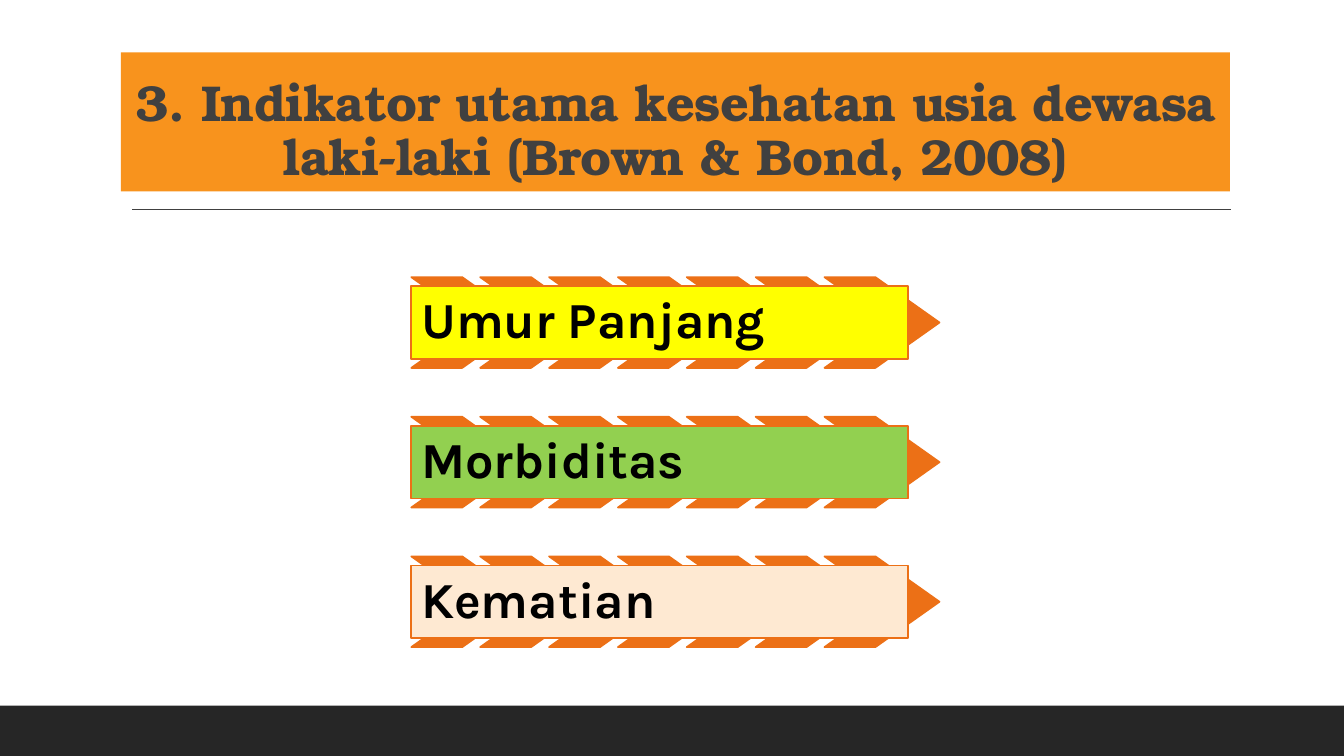
from pptx import Presentation
from pptx.dml.color import RGBColor
from pptx.enum.shapes import MSO_CONNECTOR, MSO_SHAPE as SHAPE
from pptx.enum.text import MSO_ANCHOR as ANCHOR, PP_ALIGN as ALIGN
from pptx.oxml.ns import qn
from pptx.util import Inches, Pt
from lxml import etree

TITLE = "3. Indikator utama kesehatan usia dewasa laki-laki (Brown & Bond, 2008)"
INDICATORS = [
    ("Umur Panjang", "FFFF00"),
    ("Morbiditas", "92D050"),
    ("Kematian", "FEE9D2"),
]
ORANGE, GREY = "EC7016", "404040"

LEFT, TOP, ROW_STEP = 4.08, 2.75, 1.385
CHEVRONS, CHEVRON_STEP = 7, 0.683
CHEVRON_W, CHEVRON_H = 1.14, 0.9
BAR_W, BAR_H = 4.93, 0.72


def color(value):
    return RGBColor.from_string(value)


def add_box(s, kind, x, y, w, h, fill, line=None):
    sp = s.shapes.add_shape(kind, Inches(x), Inches(y), Inches(w), Inches(h))
    sp.shadow.inherit = False
    sp.fill.solid()
    sp.fill.fore_color.rgb = color(fill)
    if line:
        sp.line.color.rgb = color(line)
        sp.line.width = Pt(1.25)
    else:
        sp.line.fill.background()
    return sp


def write(sp, text, *, font, ink, align=ALIGN.LEFT, anchor=ANCHOR.MIDDLE,
          margin_y=0.1, spacing=0):
    """Fill a shape with one bold paragraph; spacing is in points."""
    tf = sp.text_frame
    tf.word_wrap = True
    tf.vertical_anchor = anchor
    tf.margin_left = tf.margin_right = Inches(0.1)
    tf.margin_top = tf.margin_bottom = Inches(margin_y)
    p = tf.paragraphs[0]
    p.alignment = align
    p.line_spacing = 0.9
    r = p.add_run()
    r.text = text
    r.font.name = font
    r.font.size = Pt(36)
    r.font.bold = True
    r.font.color.rgb = color(ink)
    if spacing:
        r.font._element.set("spc", str(round(spacing * 100)))


def add_rule(s, x1, x2, y):
    rule = s.shapes.add_connector(MSO_CONNECTOR.STRAIGHT, Inches(x1), Inches(y),
                                  Inches(x2), Inches(y))
    rule.line.color.rgb = color(GREY)
    rule.line.width = Pt(1)
    etree.SubElement(rule._element.spPr, qn("a:effectLst"))


def add_indicator(s, y, text, fill):
    """Draw a row of chevrons with a labelled bar across it."""
    for i in range(CHEVRONS):
        chevron = add_box(s, SHAPE.CHEVRON, LEFT + i * CHEVRON_STEP, y,
                          CHEVRON_W, CHEVRON_H, ORANGE, ORANGE)
        chevron.adjustments[0] = 0.706
    bar = add_box(s, SHAPE.RECTANGLE, LEFT, y + (CHEVRON_H - BAR_H) / 2,
                  BAR_W, BAR_H, fill, ORANGE)
    write(bar, text, font="Karla", ink="000000")


def main():
    prs = Presentation()
    prs.slide_width, prs.slide_height = Inches(13.33), Inches(7.5)
    s = prs.slides.add_slide(prs.slide_layouts[6])

    add_box(s, SHAPE.RECTANGLE, 0, 7, 13.33, 0.5, "262626")
    add_rule(s, 1.31, 12.21, 2.08)
    title = add_box(s, SHAPE.RECTANGLE, 1.2, 0.52, 11, 1.38, "F8931D")
    write(title, TITLE, font="TeX Gyre Bonum", ink=GREY, align=ALIGN.CENTER,
          anchor=ANCHOR.BOTTOM, margin_y=0.05, spacing=-0.5)

    for row, (text, fill) in enumerate(INDICATORS):
        add_indicator(s, TOP + row * ROW_STEP, text, fill)

    prs.save("out.pptx")


if __name__ == "__main__":
    main()
